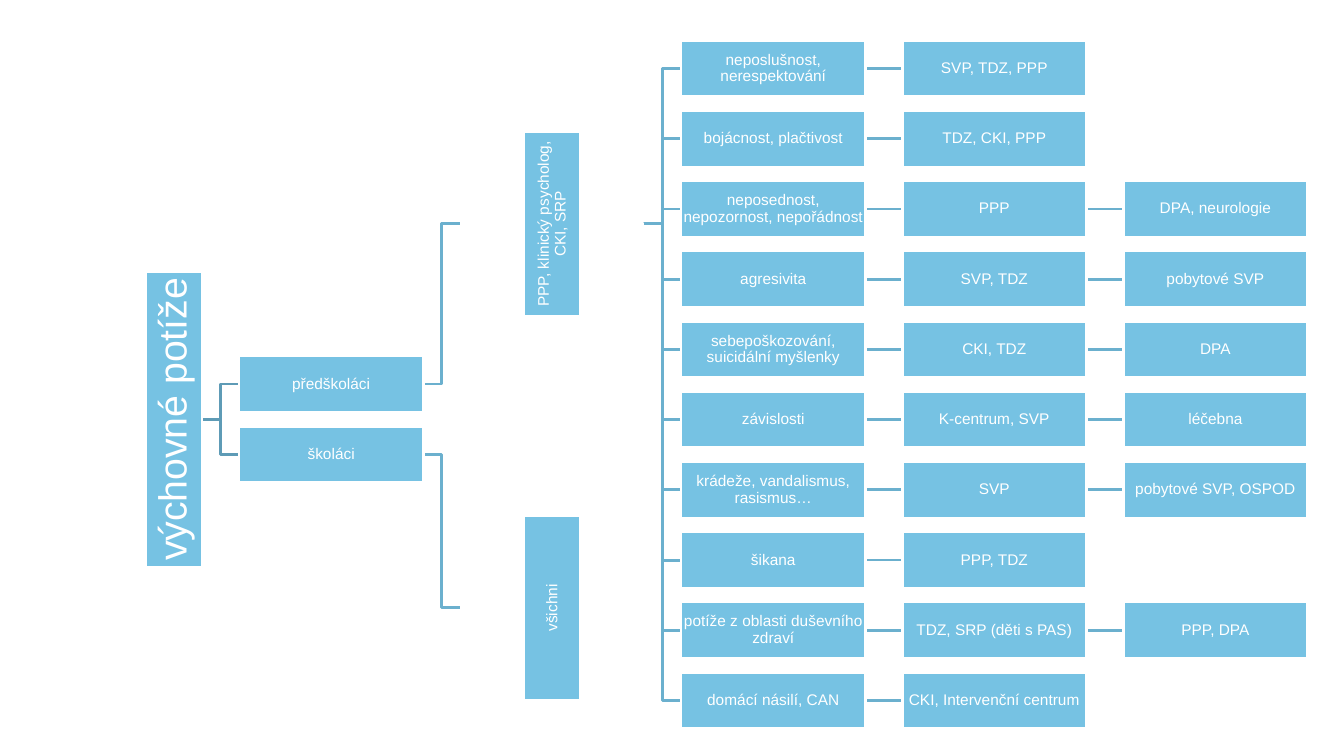
from pptx import Presentation
from pptx import util as u
from pptx.dml.color import RGBColor
from pptx.enum import shapes, text
from pptx.oxml.ns import qn
from lxml import etree

BLUE = RGBColor(0x76, 0xC2, 0xE3)
LINE = RGBColor(0x6B, 0xB0, 0xCE)
DARK = RGBColor(0x5E, 0x9B, 0xB6)
WHITE = RGBColor(0xFF, 0xFF, 0xFF)

deck = Presentation()
deck.slide_width = u.Inches(13.33)
deck.slide_height = u.Inches(7.5)
slide = deck.slides.add_slide(deck.slide_layouts[6])

wide, high, gap = u.Inches(1.83), u.Inches(0.56), u.Inches(0.37)
cols = [u.Inches(2.37 + 8.77 / 4 * n) for n in range(5)]
rows = [u.Inches(0.68 + 6.27 / 9 * n) for n in range(10)]
root = u.Inches(4.16)
young, old = root - u.Inches(0.35), root + u.Inches(0.35)
upper, lower = u.Inches(2.22), u.Inches(6.03)

table = [
    ["neposlušnost, nerespektování", "SVP, TDZ, PPP"],
    ["bojácnost, plačtivost", "TDZ, CKI, PPP"],
    ["neposednost, nepozornost, nepořádnost", "PPP", "DPA, neurologie"],
    ["agresivita", "SVP, TDZ", "pobytové SVP"],
    ["sebepoškozování, suicidální myšlenky", "CKI, TDZ", "DPA"],
    ["závislosti", "K-centrum, SVP", "léčebna"],
    ["krádeže, vandalismus, rasismus…", "SVP", "pobytové SVP, OSPOD"],
    ["šikana", "PPP, TDZ"],
    ["potíže z oblasti duševního zdraví", "TDZ, SRP (děti s PAS)", "PPP, DPA"],
    ["domácí násilí, CAN", "CKI, Intervenční centrum"],
]


def branch(right, start, end, color):
    left, mid = right - gap, right - gap // 2
    path = slide.shapes.build_freeform(left, start)
    path.add_line_segments([(mid, start), (mid, end), (right, end)], close=False)
    bend = path.convert_to_shape()
    bend.shadow.inherit = False
    bend.fill.background()
    bend.line.color.rgb = color
    bend.line.width = u.Pt(2)


def node(words, left, mid, width=wide, turn=0, size=11, pad=0.01):
    box = slide.shapes.add_shape(
        shapes.MSO_SHAPE.RECTANGLE, left, mid - high // 2, width, high)
    box.rotation = turn
    box.shadow.inherit = False
    box.fill.solid()
    box.fill.fore_color.rgb = BLUE
    box.line.color.rgb = WHITE
    box.line.width = u.Pt(2)
    frame = box.text_frame
    frame.text = words
    frame.word_wrap = True
    frame.vertical_anchor = text.MSO_ANCHOR.MIDDLE
    frame.margin_left = frame.margin_right = u.Inches(pad)
    frame.margin_top = frame.margin_bottom = u.Inches(pad)
    para = frame.paragraphs[0]
    para.alignment = text.PP_ALIGN.CENTER
    para.line_spacing = 0.9
    font = para.runs[0].font
    font.name = "Arial"
    font.size = u.Pt(size)
    font.color.rgb = WHITE
    return box


branch(cols[0], root, old, DARK)
branch(cols[0], root, young, DARK)
branch(cols[1], old, lower, LINE)
branch(cols[1], young, upper, LINE)

links = {}
for r, (mid, cells) in enumerate(zip(rows, table)):
    branch(cols[2], upper, mid, LINE)
    for c in range(1, len(cells)):
        right = cols[c + 2]
        link = slide.shapes.add_connector(
            shapes.MSO_CONNECTOR.STRAIGHT, right - gap, mid, right, mid)
        link.line.color.rgb = LINE
        link.line.width = u.Pt(2)
        props = link._element.find(qn("p:spPr"))
        etree.SubElement(props, qn("a:effectLst"))
        links[r, c] = link

node("výchovné potíže", u.Inches(0.26), root, u.Inches(2.93), 270, 28, 0.02)
node("předškoláci", cols[0], young)
node("školáci", cols[0], old)
node("PPP, klinický psycholog, CKI, SRP", cols[1], upper, turn=270)
node("všichni", cols[1], lower, turn=270)

for r, (mid, cells) in enumerate(zip(rows, table)):
    for c, words in enumerate(cells):
        box = node(words, cols[c + 2], mid)
        if c:
            links[r, c].begin_connect(last, 3)
            links[r, c].end_connect(box, 1)
        last = box

deck.save("out.pptx")
